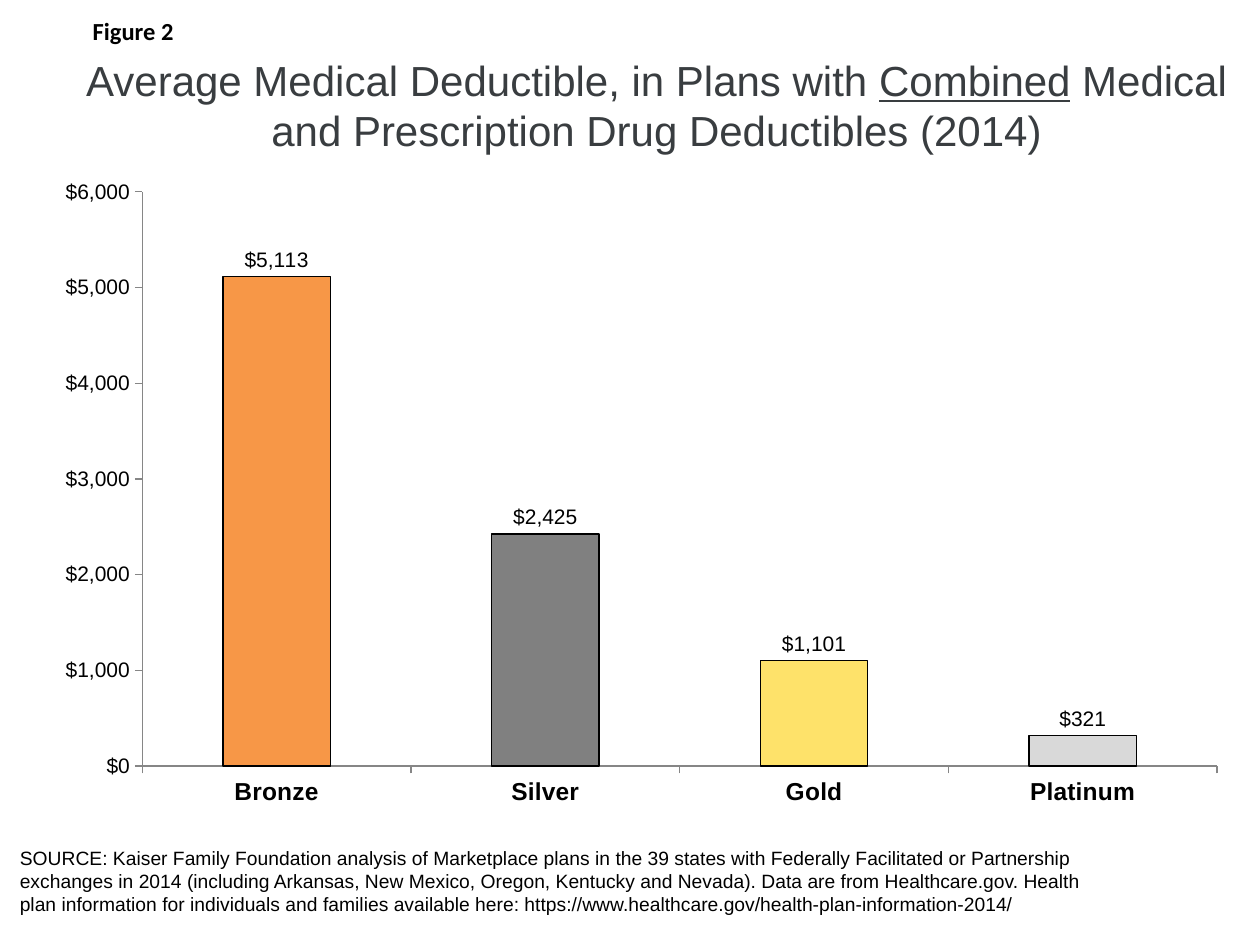
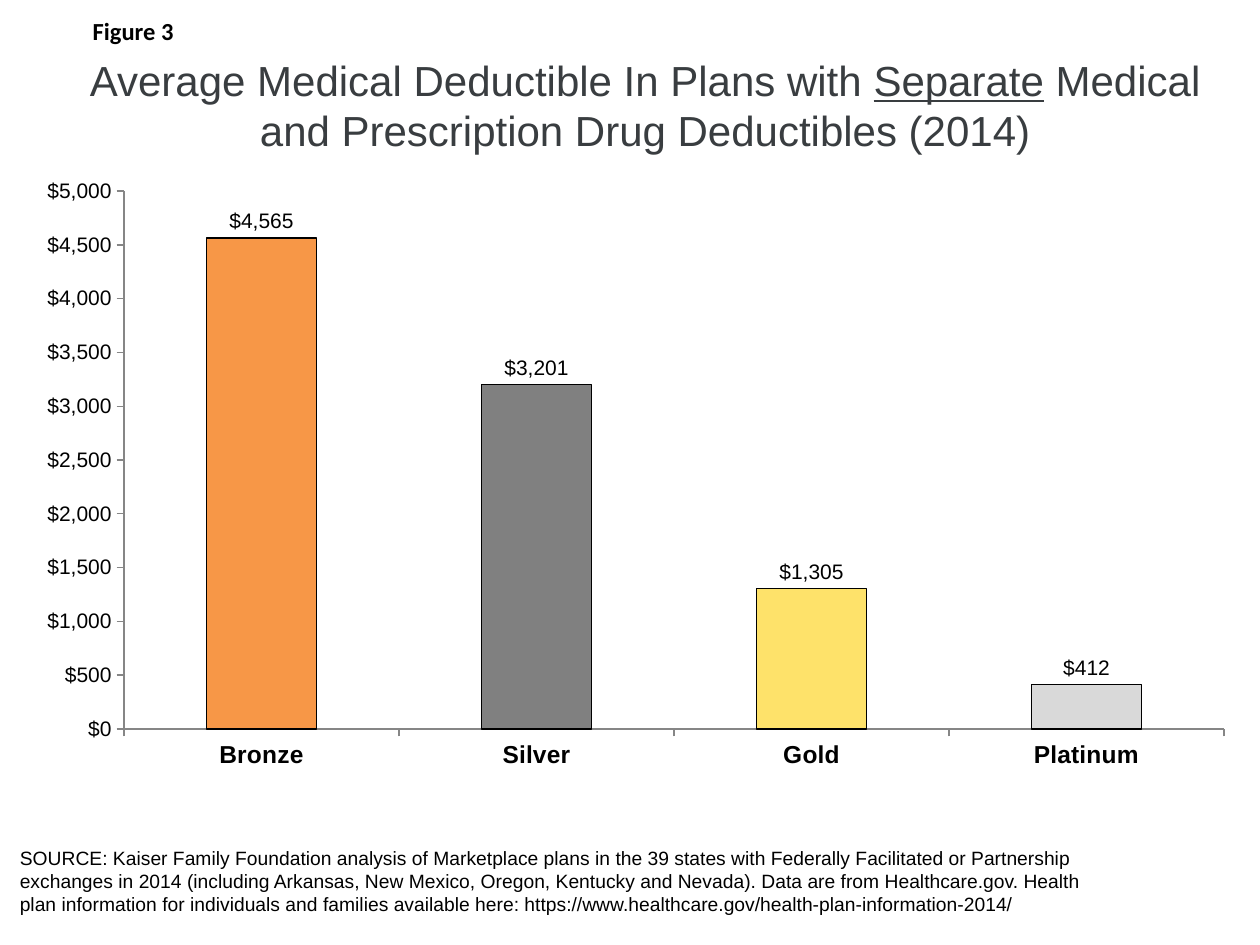
from pptx import Presentation
from pptx.chart.data import CategoryChartData
from pptx.dml.color import RGBColor
from pptx.enum.chart import XL_CHART_TYPE, XL_LABEL_POSITION, XL_TICK_MARK
from pptx.enum.text import MSO_ANCHOR, PP_ALIGN
from pptx.util import Cm, Pt

BLACK = RGBColor(0x00, 0x00, 0x00)
SLATE = RGBColor(0x39, 0x3D, 0x40)
AXIS_GREY = RGBColor(0x86, 0x86, 0x86)
NAVY = RGBColor(0x08, 0x23, 0x38)

TIERS = {
    "Bronze": RGBColor(0xF7, 0x97, 0x47),
    "Silver": RGBColor(0x80, 0x80, 0x80),
    "Gold": RGBColor(0xFE, 0xE2, 0x6A),
    "Platinum": RGBColor(0xD9, 0xD9, 0xD9),
}
DOLLARS = '"$"#,##0'
SOURCE = (
    "SOURCE: Kaiser Family Foundation analysis of Marketplace plans in the 39 states "
    "with Federally Facilitated or Partnership exchanges in 2014 (including Arkansas, "
    "New Mexico, Oregon, Kentucky and Nevada). Data are from Healthcare.gov. Health plan "
    "information for individuals and families available here: "
    "https://www.healthcare.gov/health-plan-information-2014/"
)
TITLE_END = " Medical and Prescription Drug Deductibles (2014)"

FIGURES = [
    {
        "label": "Figure 2",
        "title": ("Average Medical Deductible, in Plans with ", "Combined", TITLE_END),
        "title_left": 1.32,
        "deductibles": (5113, 2425, 1101, 321),
        "axis_top": 6000,
        "axis_step": 1000,
        "chart_area": (0.84, 3.38, 24.18, 13.13),
    },
    {
        "label": "Figure 3",
        "title": ("Average Medical Deductible In Plans with ", "Separate", TITLE_END),
        "title_left": 0.86,
        "deductibles": (4565, 3201, 1305, 412),
        "axis_top": 5000,
        "axis_step": 500,
        "chart_area": (0.46, 3.38, 24.71, 12.37),
    },
]

TITLE_RIGHT, TITLE_TOP, TITLE_HEIGHT = 25.15, 0.84, 2.54
LABEL_AREA = (0.46, 0.2, 4.45, 0.86)
SOURCE_AREA = (0.15, 16.94, 22.3, 1.68)

TITLE_FONT = {"name": "Arial", "size": Pt(24), "bold": False}
LABEL_FONT = {"name": "Calibri", "size": Pt(14), "bold": True}
SOURCE_FONT = {"name": "Arial", "size": Pt(11), "bold": False}
CHART_FONT = {"name": "Arial", "size": Pt(18)}
TIER_FONT = {"name": "Arial", "size": Pt(14), "bold": True}
VALUE_FONT = {"name": "Arial", "size": Pt(12), "bold": False}


def set_all(target, values):
    for name, value in values.items():
        setattr(target, name, value)


def style_font(font, values, color=BLACK):
    set_all(font, values)
    font.color.rgb = color


def add_text(page, area, text, font, align):
    box = page.shapes.add_textbox(*map(Cm, area))
    box.text_frame.word_wrap = True
    para = box.text_frame.paragraphs[0]
    para.alignment = align
    span = para.add_run()
    span.text = text
    style_font(span.font, font)


def write_title(page, parts, left):
    title = page.shapes.title
    set_all(title, {
        "left": Cm(left),
        "top": Cm(TITLE_TOP),
        "width": Cm(TITLE_RIGHT - left),
        "height": Cm(TITLE_HEIGHT),
    })
    set_all(title.text_frame, {"word_wrap": True, "vertical_anchor": MSO_ANCHOR.MIDDLE})
    para = title.text_frame.paragraphs[0]
    para.alignment = PP_ALIGN.CENTER
    for position, part in enumerate(parts):
        span = para.add_run()
        span.text = part
        style_font(span.font, TITLE_FONT, SLATE)
        span.font.underline = position == 1


def style_axis(axis, font):
    set_all(axis, {
        "has_major_gridlines": False,
        "major_tick_mark": XL_TICK_MARK.OUTSIDE,
        "minor_tick_mark": XL_TICK_MARK.NONE,
    })
    axis.format.line.color.rgb = AXIS_GREY
    axis.format.line.width = Pt(0.75)
    style_font(axis.tick_labels.font, font)


def outline_bar(bar, color):
    bar.format.fill.solid()
    bar.format.fill.fore_color.rgb = color
    bar.format.line.color.rgb = BLACK
    bar.format.line.width = Pt(0.75)


def add_deductible_chart(page, figure):
    data = CategoryChartData(number_format=DOLLARS)
    data.categories = list(TIERS)
    data.add_series("Series 1", figure["deductibles"])
    chart = page.shapes.add_chart(
        XL_CHART_TYPE.COLUMN_CLUSTERED, *map(Cm, figure["chart_area"]), data
    ).chart
    set_all(chart, {"has_legend": False, "has_title": False})
    style_font(chart.font, CHART_FONT)

    style_axis(chart.category_axis, TIER_FONT)
    style_axis(chart.value_axis, VALUE_FONT)
    set_all(chart.value_axis, {
        "minimum_scale": 0,
        "maximum_scale": figure["axis_top"],
        "major_unit": figure["axis_step"],
    })
    number_style = {"number_format": DOLLARS, "number_format_is_linked": False}
    set_all(chart.value_axis.tick_labels, number_style)

    plot = chart.plots[0]
    set_all(plot, {"gap_width": 150, "vary_by_categories": False})
    series = plot.series[0]
    outline_bar(series, NAVY)
    for position, color in enumerate(TIERS.values()):
        outline_bar(series.points[position], color)

    labels = series.data_labels
    set_all(labels, {
        "show_value": True,
        "position": XL_LABEL_POSITION.OUTSIDE_END,
        **number_style,
    })
    style_font(labels.font, VALUE_FONT)


def add_figure_page(deck, figure):
    page = deck.slides.add_slide(deck.slide_layouts.get_by_name("Title Only"))
    add_text(page, SOURCE_AREA, SOURCE, SOURCE_FONT, PP_ALIGN.LEFT)
    add_deductible_chart(page, figure)
    write_title(page, figure["title"], figure["title_left"])
    add_text(page, LABEL_AREA, figure["label"], LABEL_FONT, PP_ALIGN.CENTER)


def main():
    deck = Presentation()
    set_all(deck, {"slide_width": Cm(25.4), "slide_height": Cm(19.05)})
    for figure in FIGURES:
        add_figure_page(deck, figure)
    deck.save("out.pptx")


if __name__ == "__main__":
    main()
